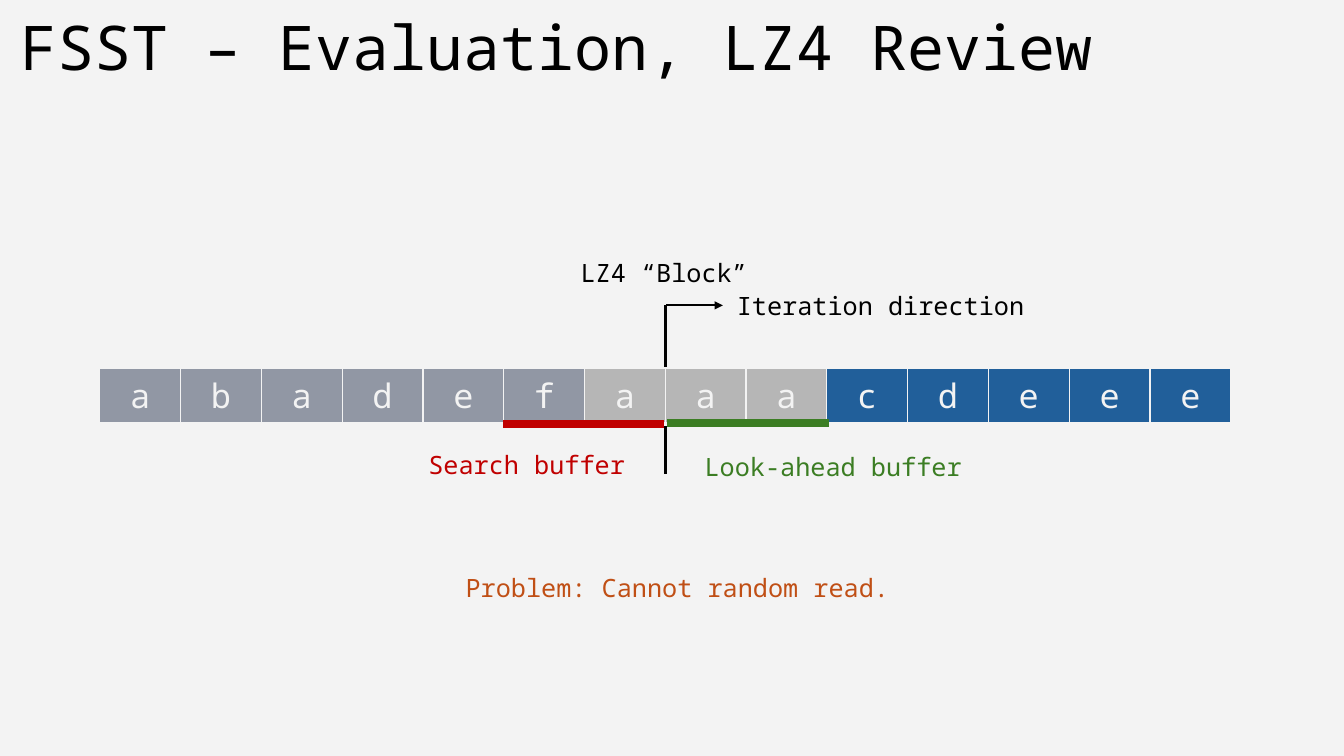
from dataclasses import dataclass

from lxml import etree
from pptx import Presentation
from pptx.dml.color import RGBColor
from pptx.enum.shapes import MSO_CONNECTOR
from pptx.enum.text import MSO_ANCHOR, PP_ALIGN
from pptx.oxml import parse_xml
from pptx.oxml.ns import nsdecls, qn
from pptx.slide import Slide
from pptx.util import Inches, Pt

STRAIGHT = MSO_CONNECTOR.STRAIGHT
MIDDLE = MSO_ANCHOR.MIDDLE
LEFT, CENTER = PP_ALIGN.LEFT, PP_ALIGN.CENTER

FONT = "Noto Sans Mono"
BLACK = RGBColor(0x00, 0x00, 0x00)
PAPER = RGBColor(0xF3, 0xF3, 0xF3)
SLATE = RGBColor(0x91, 0x97, 0xA4)
SILVER = RGBColor(0xB6, 0xB6, 0xB6)
BLUE = RGBColor(0x21, 0x5F, 0x9A)
RED = RGBColor(0xC0, 0x00, 0x00)
GREEN = RGBColor(0x3B, 0x7D, 0x23)
ORANGE = RGBColor(0xC0, 0x4F, 0x15)

BORDER_WIDTHS = {"a:lnL": 1, "a:lnR": 1, "a:lnT": 1, "a:lnB": 3}
BLOCK_WIDTH, BLOCK_HEIGHT = 11.22, 0.51


@dataclass(frozen=True)
class Label:
    text: str
    left: float
    top: float
    width: float
    color: RGBColor = BLACK


@dataclass(frozen=True)
class Line:
    start: tuple[float, float]
    end: tuple[float, float]
    color: RGBColor = BLACK
    weight: float = 1.5
    arrow: bool = False


@dataclass(frozen=True)
class Segment:
    """Neighbouring bytes of the block that share a fill."""
    letters: str
    fill: RGBColor


SEGMENTS = [Segment("abadef", SLATE), Segment("aaa", SILVER), Segment("cdeee", BLUE)]

LABELS = [
    Label("LZ4 “Block”", 5.66, 2.5, 1.86),
    Label("Iteration direction", 7.21, 2.83, 3.07),
    Label("Problem: Cannot random read.", 4.52, 5.63, 4.57, ORANGE),
    Label("Search buffer", 4.15, 4.41, 2.16, RED),
    Label("Look-ahead buffer", 6.89, 4.43, 2.76, GREEN),
]

CURSOR = Line((6.6, 3.03), (6.6, 4.7))
MARKS = [
    Line((6.61, 3.03), (7.17, 3.03), arrow=True),
    Line((4.99, 4.21), (6.59, 4.21), RED, 5.75),
    Line((6.62, 4.2), (8.22, 4.2), GREEN, 5.75),
]


def style_font(paragraph, size: float, color: RGBColor) -> None:
    paragraph.font.name = FONT
    paragraph.font.size = Pt(size)
    paragraph.font.color.rgb = color


def add_title(slide: Slide, text: str) -> None:
    title = slide.shapes.title
    title.left, title.top = Inches(0.1), Inches(0.1)
    title.width, title.height = Inches(11.5), Inches(0.81)
    title.text_frame.text = text
    title.text_frame.vertical_anchor = MIDDLE
    heading = title.text_frame.paragraphs[0]
    heading.alignment = LEFT
    heading.line_spacing = 0.9
    style_font(heading, 44, BLACK)


def add_label(slide: Slide, label: Label) -> None:
    box = slide.shapes.add_textbox(
        Inches(label.left), Inches(label.top), Inches(label.width), Inches(0.4))
    box.text_frame.word_wrap = False
    box.text_frame.text = label.text
    style_font(box.text_frame.paragraphs[0], 18, label.color)


def add_line(slide: Slide, line: Line) -> None:
    connector = slide.shapes.add_connector(
        STRAIGHT, *map(Inches, line.start + line.end))
    connector.line.color.rgb = line.color
    connector.line.width = Pt(line.weight)
    if line.arrow:
        outline = connector.line._get_or_add_ln()
        etree.SubElement(outline, qn("a:tailEnd"), type="triangle")
    etree.SubElement(connector._element.spPr, qn("a:effectLst"))


def add_borders(cell) -> None:
    """Give the cell its borders, which must precede its fill in the XML."""
    properties = cell._tc.get_or_add_tcPr()
    for position, (tag, weight) in enumerate(BORDER_WIDTHS.items()):
        properties.insert(position, parse_xml(
            f'<{tag} {nsdecls("a")} w="{Pt(weight)}"><a:solidFill>'
            f'<a:srgbClr val="{PAPER}"/></a:solidFill></{tag}>'))


def add_block(slide: Slide, segments: list[Segment]) -> None:
    """Draw the block as a one-row table, one byte per cell."""
    block_bytes = [(letter, segment.fill)
                   for segment in segments for letter in segment.letters]
    table = slide.shapes.add_table(
        1, len(block_bytes), Inches(0.99), Inches(3.65),
        Inches(BLOCK_WIDTH), Inches(BLOCK_HEIGHT)).table
    table.first_row = False
    table.horz_banding = False
    for column, (letter, fill) in enumerate(block_bytes):
        cell = table.cell(0, column)
        cell.text = letter
        cell.fill.solid()
        cell.fill.fore_color.rgb = fill
        add_borders(cell)
        paragraph = cell.text_frame.paragraphs[0]
        paragraph.alignment = CENTER
        style_font(paragraph, 24, PAPER)


def main() -> None:
    presentation = Presentation()
    presentation.slide_width = Inches(13.33)
    presentation.slide_height = Inches(7.5)
    slide = presentation.slides.add_slide(presentation.slide_layouts[5])
    slide.background.fill.solid()
    slide.background.fill.fore_color.rgb = PAPER

    add_title(slide, "FSST – Evaluation, LZ4 Review")
    add_line(slide, CURSOR)
    add_block(slide, SEGMENTS)
    for label in LABELS:
        add_label(slide, label)
    for mark in MARKS:
        add_line(slide, mark)
    presentation.save("out.pptx")


if __name__ == "__main__":
    main()
